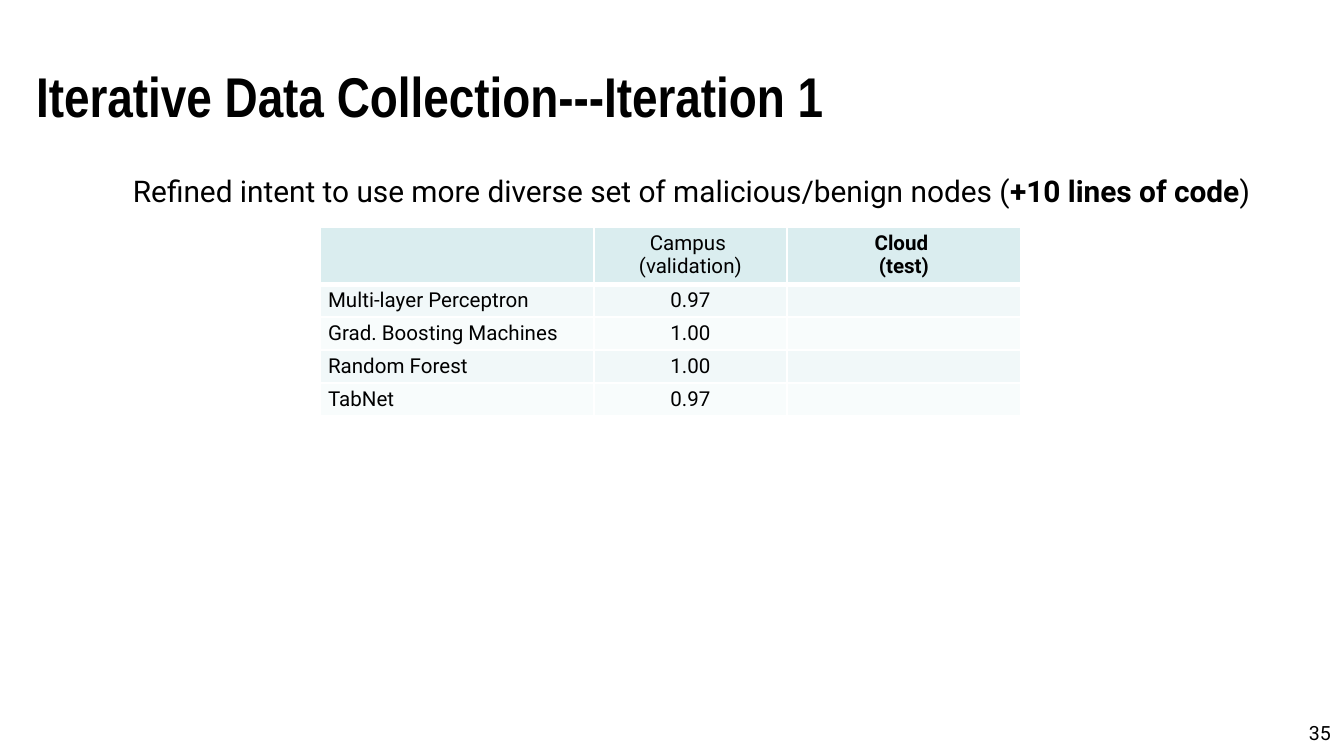
from pptx import Presentation
from pptx.dml.color import RGBColor
from pptx.enum.text import MSO_ANCHOR, PP_ALIGN
from pptx.oxml.ns import qn
from pptx.util import Pt
from lxml import etree

LEFT, CENTER, RIGHT = PP_ALIGN.LEFT, PP_ALIGN.CENTER, PP_ALIGN.RIGHT
MIDDLE, TOP = MSO_ANCHOR.MIDDLE, MSO_ANCHOR.TOP
THEME = {
    "text": "000000", "header": "DAEDEF", "bands": ["F1F8F9", "F8FCFC"], "border": "FFFFFF",
    "heading": "Arial Narrow", "body": "Roboto",
    "title": 30, "subtitle": 16, "cell": 11, "number": 10.5,
}
PX = 914400 / 134.4


def px(n):
    return round(n * PX)


def add_run(p, text, size, font=THEME["body"], bold=False):
    r = p.add_run()
    r.text = text
    r.font.name = font
    r.font.size = Pt(size)
    r.font.bold = bold
    r.font.color.rgb = RGBColor.from_string(THEME["text"])


prs = Presentation()
prs.slide_width, prs.slide_height = px(1344), px(756)
s = prs.slides.add_slide(prs.slide_layouts[6])

TEXTS = [
    ((23, 32, 1288, 126), MIDDLE, LEFT, THEME["title"], THEME["heading"],
     [("Iterative Data Collection---Iteration 1", True)]),
    ((16, 148, 1300, 60), TOP, CENTER, THEME["subtitle"], THEME["body"],
     [("Refined intent to use more diverse set of malicious/benign nodes (", False),
      ("+10 lines of code", True), (")", False)]),
    ((1031, 714, 313, 25), TOP, RIGHT, THEME["number"], THEME["body"], [("35", False)]),
]
for box, anchor, align, size, font, runs in TEXTS:
    sp = s.shapes.add_textbox(*map(px, box))
    tf = sp.text_frame
    tf.word_wrap = True
    tf.vertical_anchor = anchor
    p = tf.paragraphs[0]
    p.alignment = align
    if align == CENTER:
        p.line_spacing = 1.5
        p.level = 1
        pPr = p._p.get_or_add_pPr()
        pPr.set("marL", str(px(51)))
        pPr.set("indent", "0")
    for text, bold in runs:
        add_run(p, text, size, font, bold)

ROWS = [
    ([], ["Campus ", "(validation)"], ["Cloud ", "(test)"]),
    (["Multi-layer Perceptron"], ["0.97"], []),
    (["Grad. Boosting Machines"], ["1.00"], []),
    (["Random Forest"], ["1.00"], []),
    (["TabNet"], ["0.97"], []),
]
COL_WIDTHS = [274, 193, 234]
ROW_HEIGHTS = [57] + [33] * 4

table = s.shapes.add_table(len(ROWS), len(COL_WIDTHS), px(320), px(227),
                           px(sum(COL_WIDTHS)), px(sum(ROW_HEIGHTS))).table
for col, width in zip(table.columns, COL_WIDTHS):
    col.width = px(width)
for row, height in zip(table.rows, ROW_HEIGHTS):
    row.height = px(height)

for i, row in enumerate(ROWS):
    for j, lines in enumerate(row):
        cell = table.cell(i, j)
        cell.margin_left = cell.margin_right = px(8)
        cell.margin_top = cell.margin_bottom = px(4)
        tcPr = cell._tc.get_or_add_tcPr()
        for side in ("lnL", "lnR", "lnT", "lnB"):
            weight = 3 if i == 0 and side == "lnB" else 1
            ln = etree.SubElement(tcPr, qn("a:" + side), w=str(Pt(weight)))
            fill = etree.SubElement(ln, qn("a:solidFill"))
            etree.SubElement(fill, qn("a:srgbClr"), val=THEME["border"])
        cell.fill.solid()
        color = THEME["header"] if i == 0 else THEME["bands"][(i - 1) % 2]
        cell.fill.fore_color.rgb = RGBColor.from_string(color)
        tf = cell.text_frame
        if not lines:
            end = etree.SubElement(tf.paragraphs[0]._p, qn("a:endParaRPr"))
            end.set("sz", str(THEME["cell"] * 100))
        for k, line in enumerate(lines):
            p = tf.add_paragraph() if k else tf.paragraphs[0]
            p.alignment = CENTER if j else LEFT
            add_run(p, line, THEME["cell"], bold=i == 0 and j == 2)

prs.save("out.pptx")
